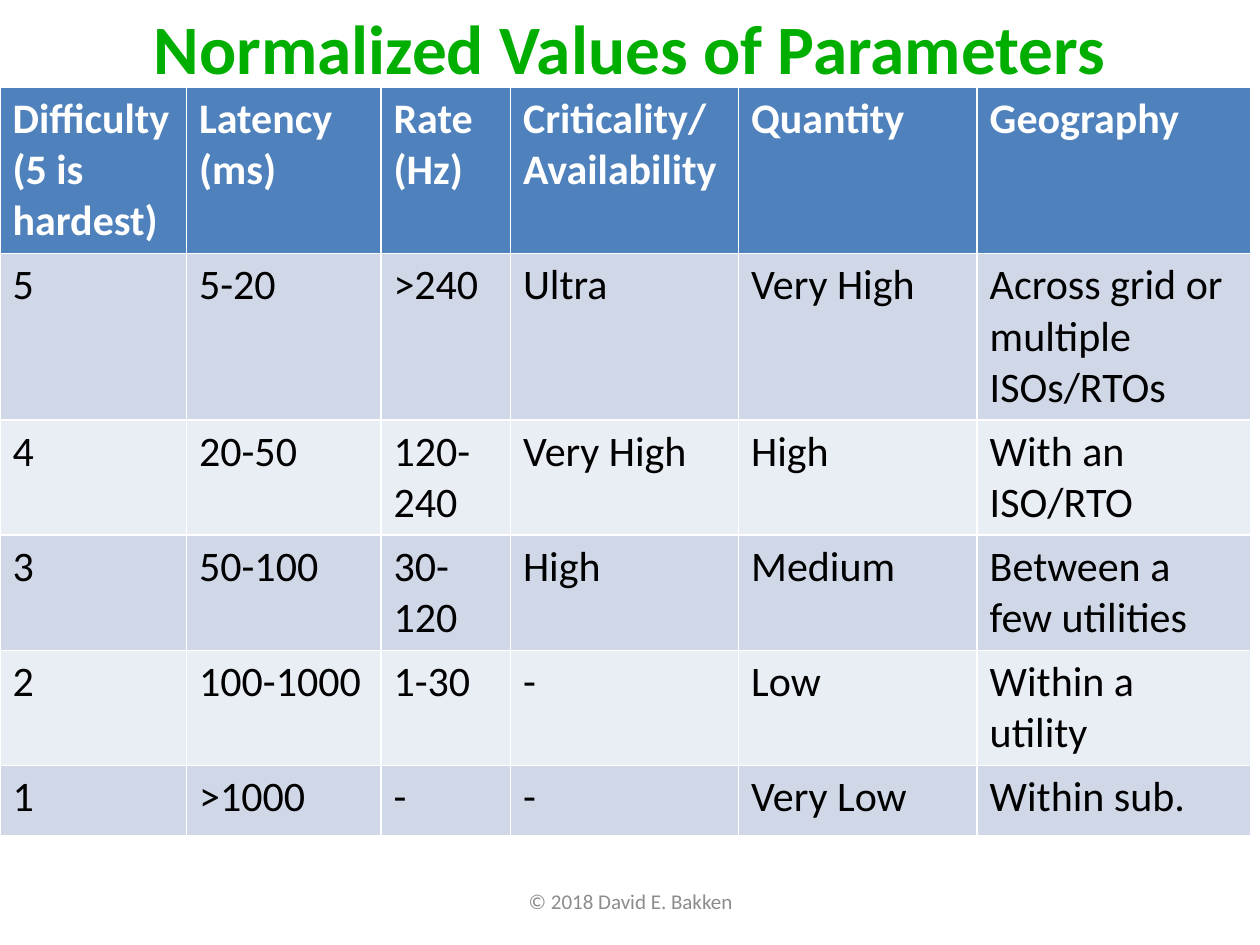
from pptx import Presentation
from pptx.dml.color import RGBColor
from pptx.enum.text import MSO_ANCHOR, MSO_AUTO_SIZE, PP_ALIGN
from pptx.util import Cm, Pt

GREEN = RGBColor(0x00, 0xAE, 0x00)
BLUE = RGBColor(0x4F, 0x81, 0xBD)
DARK = RGBColor(0xD0, 0xD8, 0xE8)
LIGHT = RGBColor(0xE9, 0xED, 0xF4)
WHITE = RGBColor(0xFF, 0xFF, 0xFF)
BLACK = RGBColor(0x00, 0x00, 0x00)
GRAY = RGBColor(0x8C, 0x8C, 0x8C)

TITLE = "Normalized Values of Parameters"
NOTE = "© 2018 David E. Bakken"
ROWS = [
    ("Difficulty\n(5 is hardest)", "Latency\n(ms)", "Rate (Hz)",
     "Criticality/ Availability", "Quantity", "Geography"),
    ("5", "5-20", ">240", "Ultra", "Very High",
     "Across grid or multiple ISOs/RTOs"),
    ("4", "20-50", "120-\n240", "Very High", "High", "With an ISO/RTO"),
    ("3", "50-100", "30-\n120", "High", "Medium", "Between a few utilities"),
    ("2", "100-1000", "1-30", "-", "Low", "Within a utility"),
    ("1", ">1000", "-", "-", "Very Low", "Within sub."),
]
WIDTHS = [3.76, 3.92, 2.61, 4.6, 4.81, 5.52]
HEIGHTS = [2.9, 2.8, 1.95, 1.95, 1.95, 1.42]


def write(frame, text, size=24, color=BLACK, bold=False, align=PP_ALIGN.LEFT):
    frame.text = text
    frame.word_wrap = True
    for para in frame.paragraphs:
        para.alignment = align
        font = para.runs[0].font
        font.name = "Calibri"
        font.size = Pt(size)
        font.bold = bold
        font.color.rgb = color


def place(shape, left, top, width, height):
    shape.left, shape.top = Cm(left), Cm(top)
    shape.width, shape.height = Cm(width), Cm(height)


def main():
    deck = Presentation()
    deck.slide_width, deck.slide_height = Cm(25.4), Cm(19.05)
    slide = deck.slides.add_slide(deck.slide_layouts[5])

    title = slide.shapes.title
    place(title, 0, 0.03, 25.4, 1.83)
    write(title.text_frame, TITLE, size=39.6, color=GREEN, bold=True,
          align=PP_ALIGN.CENTER)
    title.text_frame.auto_size = MSO_AUTO_SIZE.NONE
    title.text_frame.vertical_anchor = MSO_ANCHOR.MIDDLE

    frame = slide.shapes.add_table(len(ROWS), len(WIDTHS), 0, Cm(1.76),
                                   Cm(sum(WIDTHS)), Cm(sum(HEIGHTS)))
    table = frame.table
    for col, width in zip(table.columns, WIDTHS):
        col.width = Cm(width)
    for i, (row, height) in enumerate(zip(table.rows, HEIGHTS)):
        row.height = Cm(height)
        head = i == 0
        shade = BLUE if head else DARK if i % 2 else LIGHT
        for cell, text in zip(row.cells, ROWS[i]):
            write(cell.text_frame, text, color=WHITE if head else BLACK,
                  bold=head)
            cell.fill.solid()
            cell.fill.fore_color.rgb = shade
    frame.height = Cm(14.88)

    note = slide.shapes.add_textbox(Cm(8.69), Cm(17.65), Cm(8.05), Cm(1.02))
    write(note.text_frame, NOTE, size=12, color=GRAY, align=PP_ALIGN.CENTER)
    note.text_frame.vertical_anchor = MSO_ANCHOR.MIDDLE

    deck.save("out.pptx")


if __name__ == "__main__":
    main()
